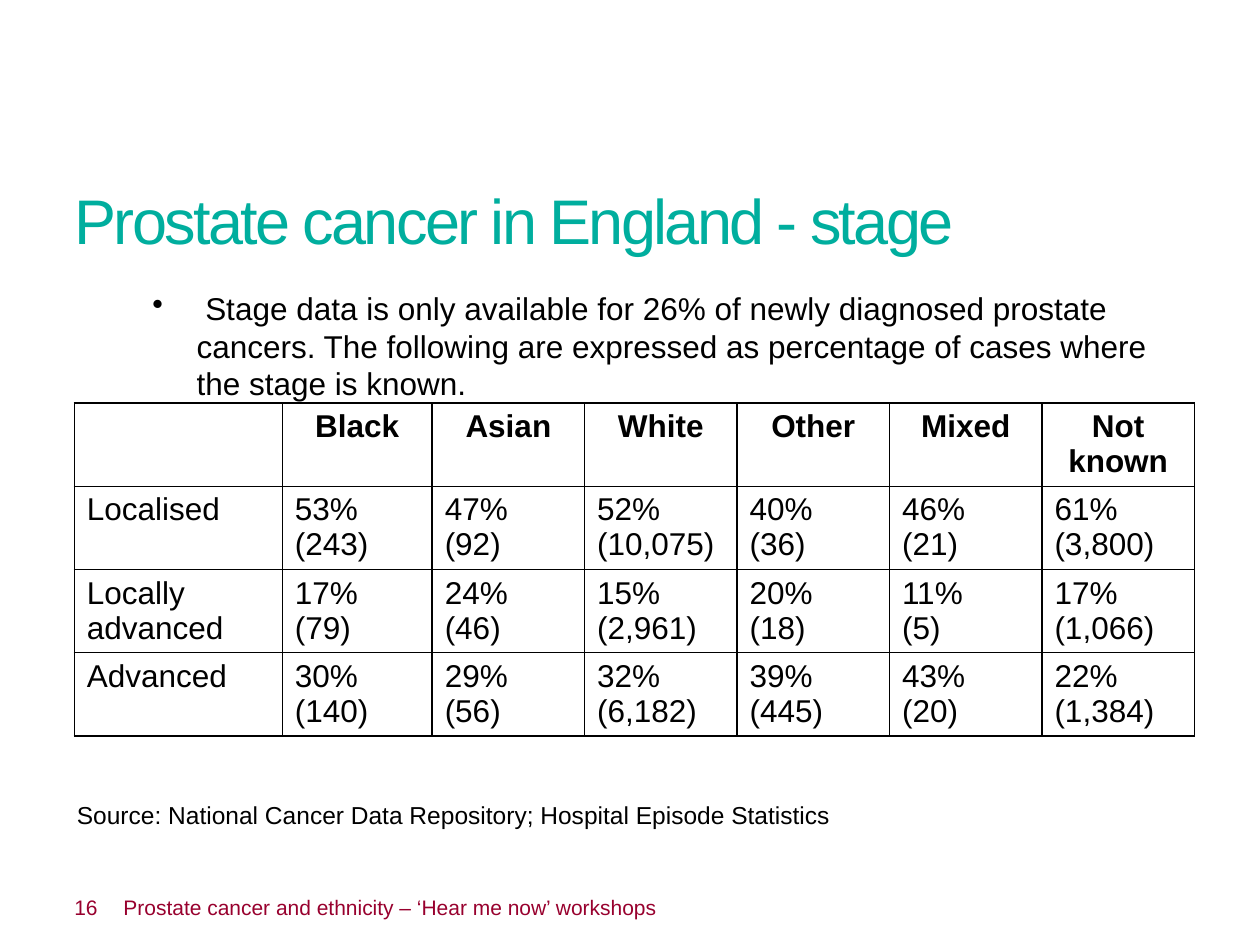
from lxml import etree
from pptx import Presentation
from pptx import util as u
from pptx.dml.color import RGBColor
from pptx.enum import shapes, text
from pptx.oxml.ns import qn

TEAL = RGBColor(0x00, 0xAE, 0x9E)
CRIMSON = RGBColor(0x98, 0x00, 0x2E)
BLACK = RGBColor(0, 0, 0)
WHITE = RGBColor(255, 255, 255)

deck = Presentation()
deck.slide_width, deck.slide_height = u.Inches(10), u.Inches(7.5)
page = deck.slides.add_slide(deck.slide_layouts[6])


def style(para, size, color, bold=False):
    para.font.name = "Arial"
    para.font.size = u.Pt(size)
    para.font.color.rgb = color
    para.font.bold = bold


def write(box, words, size, color, anchor=text.MSO_ANCHOR.TOP):
    frame = box.text_frame
    frame.word_wrap = True
    frame.vertical_anchor = anchor
    frame.margin_left = frame.margin_right = frame.margin_top = frame.margin_bottom = 0
    para = frame.paragraphs[0]
    para.text = words
    para.alignment = text.PP_ALIGN.LEFT
    style(para, size, color)
    return para


title = page.shapes.add_textbox(u.Inches(0.59), u.Inches(1.44), u.Inches(8.78), u.Inches(0.66))
para = write(title, "Prostate cancer in England - stage", 36, TEAL)
para.runs[0].font._element.set("spc", "-150")

body = page.shapes.add_textbox(u.Inches(0.61), u.Inches(2.3), u.Inches(8.78), u.Inches(0.9))
para = write(body, " Stage data is only available for 26% of newly diagnosed prostate cancers. "
             "The following are expressed as percentage of cases where the stage is known.", 18, BLACK)
para.line_spacing = u.Pt(21.4)
props = para._p.get_or_add_pPr()
props.set("marL", str(u.Inches(0.95)))
props.set("indent", str(u.Inches(-0.35)))
bullet = etree.Element(qn("a:buChar"), char="•")
props.find(qn("a:defRPr")).addprevious(bullet)

source = page.shapes.add_textbox(u.Inches(0.61), u.Inches(6.35), u.Inches(8.78), u.Inches(0.3))
write(source, "Source: National Cancer Data Repository; Hospital Episode Statistics", 14, BLACK)

footer = page.shapes.add_shape(shapes.MSO_SHAPE.RECTANGLE, 0, u.Inches(6.9), u.Inches(10), u.Inches(0.6))
footer.shadow.inherit = False
footer.fill.solid()
footer.fill.fore_color.rgb = WHITE
footer.line.fill.background()
write(footer, "16", 12, CRIMSON, text.MSO_ANCHOR.MIDDLE)
footer.text_frame.margin_left = u.Inches(0.59)

caption = page.shapes.add_textbox(u.Inches(0.98), u.Inches(6.9), u.Inches(8.43), u.Inches(0.6))
write(caption, "Prostate cancer and ethnicity – ‘Hear me now’ workshops", 12, CRIMSON, text.MSO_ANCHOR.MIDDLE)

ROWS = [
    ["", "Black", "Asian", "White", "Other", "Mixed", "Not known"],
    ["Localised", "53% (243)", "47% (92)", "52% (10,075)", "40% (36)", "46% (21)", "61% (3,800)"],
    ["Locally advanced", "17% (79)", "24% (46)", "15% (2,961)", "20% (18)", "11%\n(5)", "17% (1,066)"],
    ["Advanced", "30% (140)", "29% (56)", "32% (6,182)", "39% (445)", "43% (20)", "22% (1,384)"],
]
WIDTHS = [1.65, 1.19] + [1.21] * 5

table = page.shapes.add_table(len(ROWS), len(WIDTHS), u.Inches(0.59), u.Inches(3.2),
                              u.Inches(sum(WIDTHS)), u.Inches(0.66 * len(ROWS))).table
for column, width in zip(table.columns, WIDTHS):
    column.width = u.Inches(width)
for r, row in enumerate(ROWS):
    table.rows[r].height = u.Inches(0.66)
    for c, words in enumerate(row):
        cell = table.cell(r, c)
        cell.text = words
        for para in cell.text_frame.paragraphs:
            para.alignment = text.PP_ALIGN.LEFT if r else text.PP_ALIGN.CENTER
            para.line_spacing = u.Pt(20)
            style(para, 18, BLACK, r == 0)
        cell_props = cell._tc.get_or_add_tcPr()
        for side in ("lnL", "lnR", "lnT", "lnB"):
            border = etree.SubElement(cell_props, qn("a:" + side), w=str(u.Pt(1)))
            fill = etree.SubElement(border, qn("a:solidFill"))
            etree.SubElement(fill, qn("a:srgbClr"), val=str(BLACK))
        cell.fill.background()

deck.save("out.pptx")
